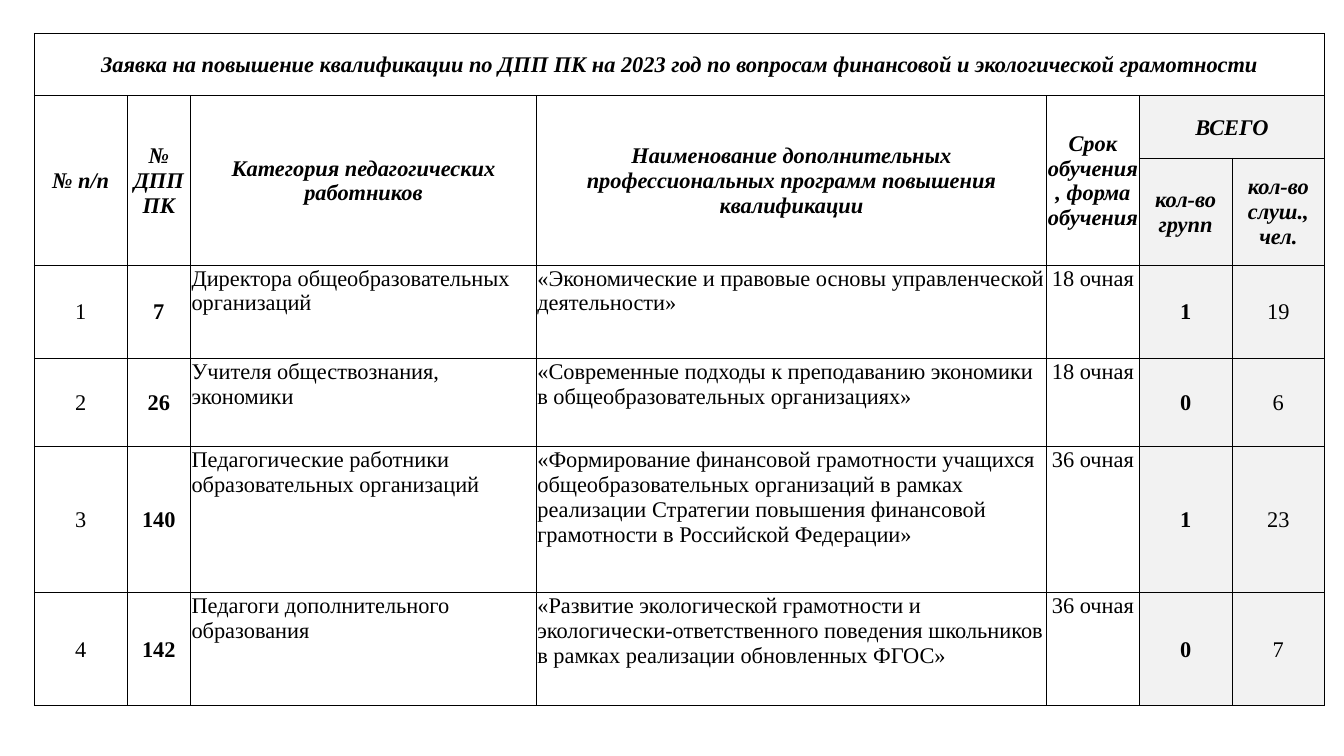
from lxml import etree
from pptx import Presentation
from pptx.dml.color import RGBColor
from pptx.enum.text import MSO_ANCHOR, PP_ALIGN
from pptx.oxml.ns import qn
from pptx.util import Emu, Pt

CENTER, LEFT = PP_ALIGN.CENTER, PP_ALIGN.LEFT
MIDDLE, TOP = MSO_ANCHOR.MIDDLE, MSO_ANCHOR.TOP
EMU_PER_PX = 9144  # 100 px to the inch

COLUMN_WIDTHS = [92, 63, 343, 506, 92, 92, 92]
ROW_HEIGHTS = [62, 62, 106, 93, 87, 145, 112]
FIRST_TOTAL_COLUMN = 5
FIRST_PROGRAM_ROW = 3

# (row, column, rows spanned, columns spanned, text)
HEADINGS = [
    (0, 0, 1, 7, "Заявка на повышение квалификации по ДПП ПК на 2023 год "
                 "по вопросам финансовой и экологической грамотности"),
    (1, 0, 2, 1, "№ п/п"),
    (1, 1, 2, 1, "№ ДПП ПК"),
    (1, 2, 2, 1, "Категория педагогических работников"),
    (1, 3, 2, 1, "Наименование дополнительных профессиональных программ "
                 "повышения квалификации"),
    (1, 4, 2, 1, "Срок обучения, форма обучения"),
    (1, 5, 1, 2, "ВСЕГО"),
    (2, 5, 1, 1, "кол-во групп"),
    (2, 6, 1, 1, "кол-во слуш., чел."),
]

PROGRAMS = [
    ("1", "7", "Директора общеобразовательных организаций",
     "«Экономические и правовые основы управленческой деятельности»",
     "18 очная", "1", "19"),
    ("2", "26", "Учителя обществознания, экономики",
     "«Современные подходы к преподаванию экономики "
     "в общеобразовательных организациях»",
     "18 очная", "0", "6"),
    ("3", "140", "Педагогические работники образовательных организаций",
     "«Формирование финансовой грамотности учащихся "
     "общеобразовательных организаций в рамках реализации Стратегии "
     "повышения финансовой грамотности в Российской Федерации»",
     "36 очная", "1", "23"),
    ("4", "142", "Педагоги дополнительного образования",
     "«Развитие экологической грамотности и экологически-ответственного "
     "поведения школьников в рамках реализации обновленных ФГОС»",
     "36 очная", "0", "7"),
]

# (alignment, anchor, bold) for each column of the program rows
PROGRAM_COLUMNS = [
    (CENTER, MIDDLE, False), (CENTER, MIDDLE, True), (LEFT, TOP, False),
    (LEFT, TOP, False), (CENTER, TOP, False), (CENTER, MIDDLE, True),
    (CENTER, MIDDLE, False),
]


def px(length):
    return Emu(length * EMU_PER_PX)


def color(hex_string):
    return RGBColor.from_string(hex_string)


class SlideBuilder:
    font = "Times New Roman"
    size = 16
    ink = "000000"
    paper = "FFFFFF"
    shade = "F2F2F2"
    border_width = 0.5

    def __init__(self, slide):
        self.slide = slide

    def table(self, left, top, widths, heights):
        table = self.slide.shapes.add_table(
            len(heights), len(widths), px(left), px(top),
            px(sum(widths)), px(sum(heights))).table
        table.first_row = table.horz_banding = False
        for column, width in zip(table.columns, widths):
            column.width = px(width)
        for row, height in zip(table.rows, heights):
            row.height = px(height)
        return table

    def frame(self, cell, fill):
        cell.margin_left = cell.margin_top = cell.margin_right = px(1)
        cell.margin_bottom = 0
        properties = cell._tc.get_or_add_tcPr()
        for side in ("a:lnL", "a:lnR", "a:lnT", "a:lnB"):
            line = etree.SubElement(properties, qn(side),
                                    w=str(Pt(self.border_width)))
            solid = etree.SubElement(line, qn("a:solidFill"))
            etree.SubElement(solid, qn("a:srgbClr"), val=self.ink)
        cell.fill.solid()
        cell.fill.fore_color.rgb = color(fill)

    def text(self, cell, words, align, anchor, bold, italic=False):
        cell.vertical_anchor = anchor
        cell.text_frame.text = words
        paragraph = cell.text_frame.paragraphs[0]
        paragraph.alignment = align
        font = paragraph.runs[0].font
        font.name, font.size = self.font, Pt(self.size)
        font.bold, font.italic = bold, italic
        font.color.rgb = color(self.ink)


def main():
    deck = Presentation()
    deck.slide_width, deck.slide_height = px(1333), px(750)
    builder = SlideBuilder(deck.slides.add_slide(deck.slide_layouts[6]))
    request = builder.table(34, 33, COLUMN_WIDTHS, ROW_HEIGHTS)

    # Borders and the shaded block of totals
    for row in range(len(ROW_HEIGHTS)):
        for column in range(len(COLUMN_WIDTHS)):
            is_total = row > 0 and column >= FIRST_TOTAL_COLUMN
            builder.frame(request.cell(row, column),
                          builder.shade if is_total else builder.paper)

    # Title and column headings
    for row, column, row_span, column_span, heading in HEADINGS:
        cell = request.cell(row, column)
        if row_span * column_span > 1:
            cell.merge(request.cell(row + row_span - 1,
                                    column + column_span - 1))
        builder.text(cell, heading, CENTER, MIDDLE, True, True)

    # Training programs
    for row, program in enumerate(PROGRAMS, FIRST_PROGRAM_ROW):
        for column, (words, look) in enumerate(zip(program, PROGRAM_COLUMNS)):
            builder.text(request.cell(row, column), words, *look)

    deck.save("out.pptx")


if __name__ == "__main__":
    main()
